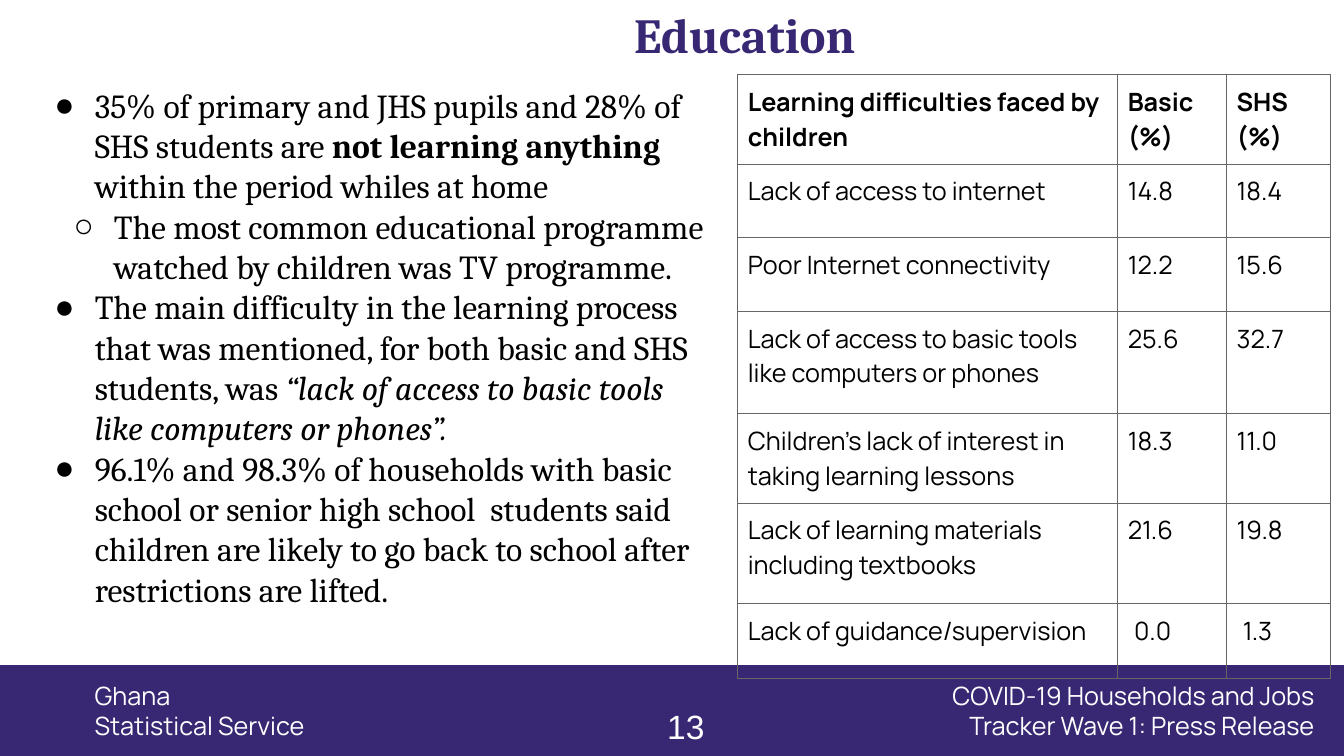
"""Build the Education slide with findings and a table of learning difficulties."""
from dataclasses import dataclass

from lxml.etree import SubElement
from pptx import Presentation
from pptx.dml.color import RGBColor
from pptx.enum.shapes import MSO_SHAPE as Preset
from pptx.enum.text import MSO_ANCHOR as Anchor, MSO_AUTO_SIZE as AutoSize, PP_ALIGN as Align
from pptx.oxml.ns import qn
from pptx.util import Pt

PURPLE = RGBColor(0x38, 0x28, 0x73)
BLACK = RGBColor(0, 0, 0)
WHITE = RGBColor(0xFF, 0xFF, 0xFF)
GRAY = RGBColor(0x66, 0x66, 0x66)
SLIDE_WIDTH, SLIDE_HEIGHT = 960, 540


@dataclass(frozen=True)
class Box:
    left: float
    top: float
    width: float
    height: float

    def lengths(self) -> tuple:
        return Pt(self.left), Pt(self.top), Pt(self.width), Pt(self.height)


@dataclass(frozen=True)
class Finding:
    text: str
    bold: str = ""
    italic: str = ""
    ending: str = ""
    level: int = 0


@dataclass(frozen=True)
class Label:
    box: Box
    lines: tuple
    font: str = "Manrope"
    size: float = 18
    align: Align = Align.LEFT


@dataclass(frozen=True)
class Row:
    height: float
    cells: tuple
    bold: bool = False
    value_indent: float = 0


BAND = Box(0, 475, SLIDE_WIDTH, 65)
TITLE = Box(262, 5.76, 540, 42.5)
BODY = Box(24.5, 56.9, 491.8, 417.6)
TABLE = Box(527, 53.5, 423.4, 409)
COLUMN_WIDTHS = (271.4, 77.8, 74.2)
BULLETS = (("●", 36), ("○", 49.7))
BULLET_HANG = 28.8

FINDINGS = (
    Finding("35% of primary and JHS pupils and 28% of SHS students are ",
            bold="not learning anything", ending=" within the period whiles at home"),
    Finding("The most common educational programme watched by children was TV programme.", level=1),
    Finding("The main difficulty in the learning process that was mentioned, "
            "for both basic and SHS students, was ",
            italic="“lack of access to basic tools like computers or phones”."),
    Finding("96.1% and 98.3% of households with basic school or senior high school  students said "
            "children are likely to go back to school after restrictions are lifted."),
)
LABELS = (
    Label(Box(60.5, 482.4, 178.6, 51), ("Ghana", "Statistical Service")),
    Label(Box(622, 482.4, 324, 51),
          ("COVID-19 Households and Jobs Tracker Wave 1: Press Release",), align=Align.RIGHT),
    Label(Box(465, 501, 45.4, 29), ("13",), font="Arial", size=24, align=Align.RIGHT),
)
ROWS = (
    Row(53.3, ("Learning difficulties faced by children", "Basic (%)", "SHS (%)"), bold=True),
    Row(52.6, ("Lack of access to internet", "14.8", "18.4")),
    Row(52.6, ("Poor Internet connectivity", "12.2", "15.6")),
    Row(73.4, ("Lack of access to basic tools like computers or phones", "25.6", "32.7")),
    Row(53.3, ("Children’s lack of interest in taking learning lessons", "18.3", "11.0")),
    Row(72, ("Lack of learning materials including textbooks", "21.6", "19.8")),
    Row(53.3, ("Lack of guidance/supervision", "0.0", "1.3"), value_indent=4.5),
)


def add_run(paragraph, text: str, *, font: str, size: float, color: RGBColor = BLACK,
            bold: bool = False, italic: bool = False) -> None:
    run = paragraph.add_run()
    run.text = text
    run.font.name, run.font.size = font, Pt(size)
    run.font.bold, run.font.italic = bold, italic
    run.font.color.rgb = color


def next_paragraph(frame, index: int):
    return frame.add_paragraph() if index else frame.paragraphs[0]


def place(shape, box: Box):
    shape.left, shape.top, shape.width, shape.height = box.lengths()
    frame = shape.text_frame
    frame.word_wrap, frame.auto_size = True, AutoSize.NONE
    return frame


def add_band(slide) -> None:
    band = slide.shapes.add_shape(Preset.RECTANGLE, *BAND.lengths())
    band.shadow.inherit = False
    band.fill.solid()
    band.fill.fore_color.rgb = PURPLE
    band.line.fill.background()


def fill_title(shape) -> None:
    frame = place(shape, TITLE)
    frame.vertical_anchor = Anchor.MIDDLE
    paragraph = frame.paragraphs[0]
    paragraph.alignment, paragraph.line_spacing = Align.CENTER, 0.9
    add_run(paragraph, "Education", font="Cambria", size=35, color=PURPLE, bold=True)


def set_bullet(paragraph, level: int) -> None:
    character, indent = BULLETS[level]
    paragraph.level = level
    paragraph.space_before = Pt(0)
    properties = paragraph._p.get_or_add_pPr()
    properties.set("marL", str(Pt(indent)))
    properties.set("indent", str(-Pt(BULLET_HANG)))
    color = SubElement(properties, qn("a:buClr"))
    SubElement(color, qn("a:srgbClr"), val=str(BLACK))
    SubElement(properties, qn("a:buFont"), typeface="Arial")
    SubElement(properties, qn("a:buChar"), char=character)


def fill_body(shape) -> None:
    frame = place(shape, BODY)
    for index, finding in enumerate(FINDINGS):
        paragraph = next_paragraph(frame, index)
        set_bullet(paragraph, finding.level)
        parts = ((finding.text, False, False), (finding.bold, True, False),
                 (finding.italic, False, True), (finding.ending, False, False))
        for text, bold, italic in parts:
            if text:
                add_run(paragraph, text, font="Cambria", size=24, bold=bold, italic=italic)


def add_label(slide, label: Label) -> None:
    frame = place(slide.shapes.add_textbox(*label.box.lengths()), label.box)
    for index, line in enumerate(label.lines):
        paragraph = next_paragraph(frame, index)
        paragraph.alignment = label.align
        add_run(paragraph, line, font=label.font, size=label.size, color=WHITE)


def set_borders(cell) -> None:
    properties = cell._tc.get_or_add_tcPr()
    for position, side in enumerate(("lnL", "lnR", "lnT", "lnB")):
        line = SubElement(properties, qn(f"a:{side}"), w=str(Pt(0.75)))
        fill = SubElement(line, qn("a:solidFill"))
        SubElement(fill, qn("a:srgbClr"), val=str(GRAY))
        properties.insert(position, line)


def add_difficulties(slide) -> None:
    table = slide.shapes.add_table(len(ROWS), len(COLUMN_WIDTHS), *TABLE.lengths()).table
    table.first_row = table.horz_banding = False
    for column, width in zip(table.columns, COLUMN_WIDTHS):
        column.width = Pt(width)
    for table_row, row in zip(table.rows, ROWS):
        table_row.height = Pt(row.height)
        for index, (cell, text) in enumerate(zip(table_row.cells, row.cells)):
            cell.margin_left = Pt(7.2 + (row.value_indent if index else 0))
            cell.margin_right = cell.margin_top = cell.margin_bottom = Pt(7.2)
            cell.fill.background()
            set_borders(cell)
            add_run(cell.text_frame.paragraphs[0], text, font="Manrope", size=18, bold=row.bold)


def main() -> None:
    presentation = Presentation()
    presentation.slide_width, presentation.slide_height = Pt(SLIDE_WIDTH), Pt(SLIDE_HEIGHT)
    slide = presentation.slides.add_slide(presentation.slide_layouts[1])
    add_band(slide)
    fill_title(slide.shapes.title)
    fill_body(slide.placeholders[1])
    add_difficulties(slide)
    for label in LABELS:
        add_label(slide, label)
    presentation.save("out.pptx")


if __name__ == "__main__":
    main()
